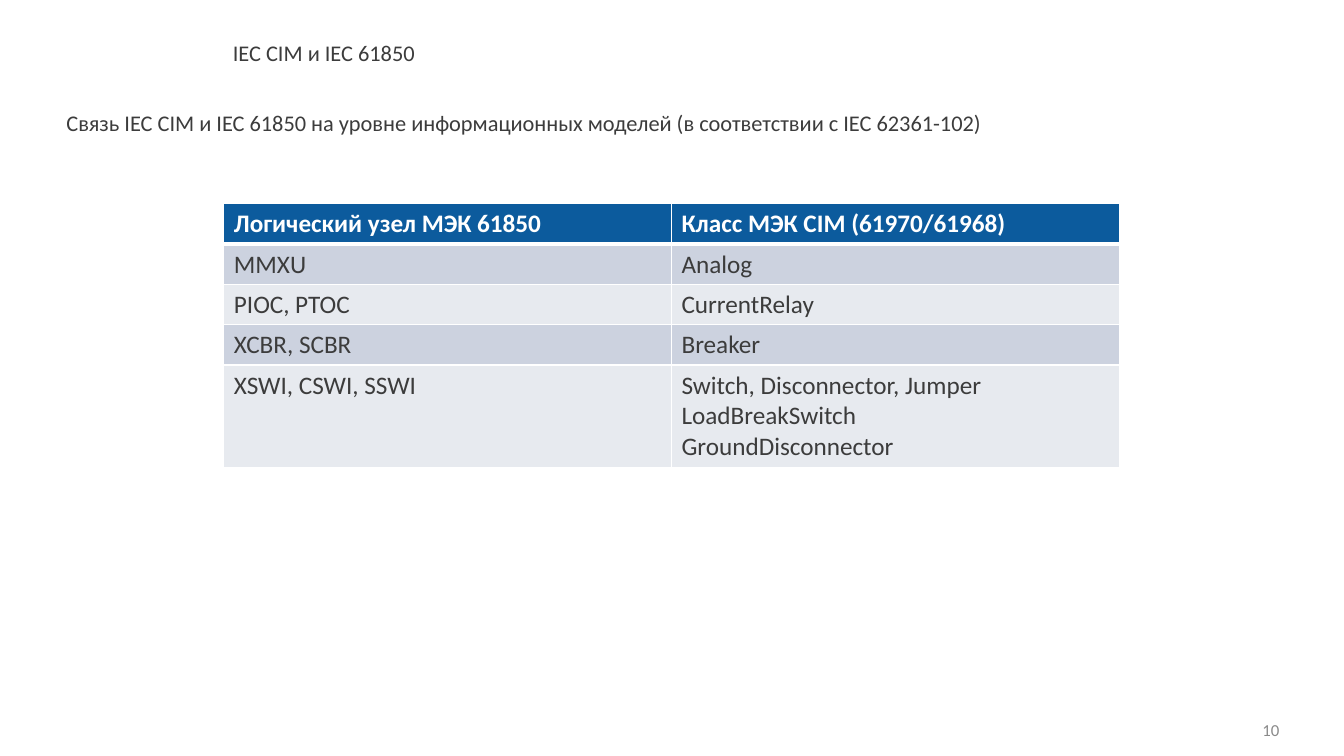
from dataclasses import dataclass

from lxml import etree
from pptx import Presentation
from pptx.dml.color import RGBColor
from pptx.enum import text as t
from pptx.oxml import ns
from pptx.util import Inches, Pt


@dataclass(frozen=True)
class Theme:
    font: str = "Calibri"
    ink: str = "3C3C3C"
    muted: str = "8A8A8A"
    white: str = "FFFFFF"
    header: str = "0C5B9D"
    bands: tuple = ("CCD2DF", "E7EAEF")
    number_size: int = 12
    heading_size: int = 16
    table_size: int = 18


theme = Theme()


def write(paragraph, content, size, color, bold=False):
    run = paragraph.add_run()
    run.text = content
    run.font.name = theme.font
    run.font.size = Pt(size)
    run.font.bold = bold
    run.font.color.rgb = RGBColor.from_string(color)


def add_border(cell, position, side, width):
    """Insert one white cell border at its place in the cell properties."""
    line = etree.Element(ns.qn(f"a:ln{side}"), w=str(Pt(width)))
    fill = etree.SubElement(line, ns.qn("a:solidFill"))
    etree.SubElement(fill, ns.qn("a:srgbClr"), val=theme.white)
    cell._tc.get_or_add_tcPr().insert(position, line)


prs = Presentation()
prs.slide_width, prs.slide_height = Inches(13.33), Inches(7.5)
slide = prs.slides.add_slide(prs.slide_layouts[6])

# Headings and page number
labels = [
    ("IEC CIM и IEC 61850", (2.31, 0.42, 10.38, 0.47),
     theme.heading_size, theme.ink, t.PP_ALIGN.LEFT, t.MSO_ANCHOR.TOP, 0.9),
    ("Связь IEC CIM и IEC 61850 на уровне информационных моделей "
     "(в соответствии с IEC 62361-102)", (0.66, 1.08, 12.03, 0.55),
     theme.heading_size, theme.ink, t.PP_ALIGN.LEFT, t.MSO_ANCHOR.TOP, 1.0),
    ("10", (12.12, 7.15, 0.57, 0.18),
     theme.number_size, theme.muted, t.PP_ALIGN.RIGHT, t.MSO_ANCHOR.MIDDLE, 1.0),
]
for content, place, size, color, align, anchor, spacing in labels:
    frame = slide.shapes.add_textbox(*map(Inches, place)).text_frame
    frame.word_wrap = True
    frame.margin_left = frame.margin_right = frame.margin_top = frame.margin_bottom = 0
    frame.vertical_anchor = anchor
    paragraph = frame.paragraphs[0]
    paragraph.alignment = align
    paragraph.line_spacing = spacing
    write(paragraph, content, size, color)

# Logical nodes and their CIM classes
mapping = [
    (["Логический узел МЭК 61850"], ["Класс МЭК CIM (61970/61968)"]),
    (["MMXU"], ["Analog"]),
    (["PIOC, PTOC"], ["CurrentRelay"]),
    (["XCBR, SCBR"], ["Breaker"]),
    (["XSWI, CSWI, SSWI"],
     ["Switch, Disconnector, Jumper", "LoadBreakSwitch", "GroundDisconnector"]),
]
row_heights = [0.4, 0.4, 0.4, 0.4, 1.02]
table = slide.shapes.add_table(
    len(mapping), 2, Inches(2.22), Inches(2.02), Inches(8.88), Inches(sum(row_heights))
).table
for column in table.columns:
    column.width = Inches(4.44)

for r, (entries, height) in enumerate(zip(mapping, row_heights)):
    table.rows[r].height = Inches(height)
    is_header = r == 0
    background = theme.header if is_header else theme.bands[(r - 1) % 2]
    color = theme.white if is_header else theme.ink
    widths = {"L": 1, "R": 1, "T": 3 if r == 1 else 1, "B": 3 if is_header else 1}
    for c, lines in enumerate(entries):
        cell = table.cell(r, c)
        cell.fill.solid()
        cell.fill.fore_color.rgb = RGBColor.from_string(background)
        for position, (side, width) in enumerate(widths.items()):
            add_border(cell, position, side, width)
        for i, line in enumerate(lines):
            frame = cell.text_frame
            paragraph = frame.add_paragraph() if i else frame.paragraphs[0]
            write(paragraph, line, theme.table_size, color, is_header)

prs.save("out.pptx")
